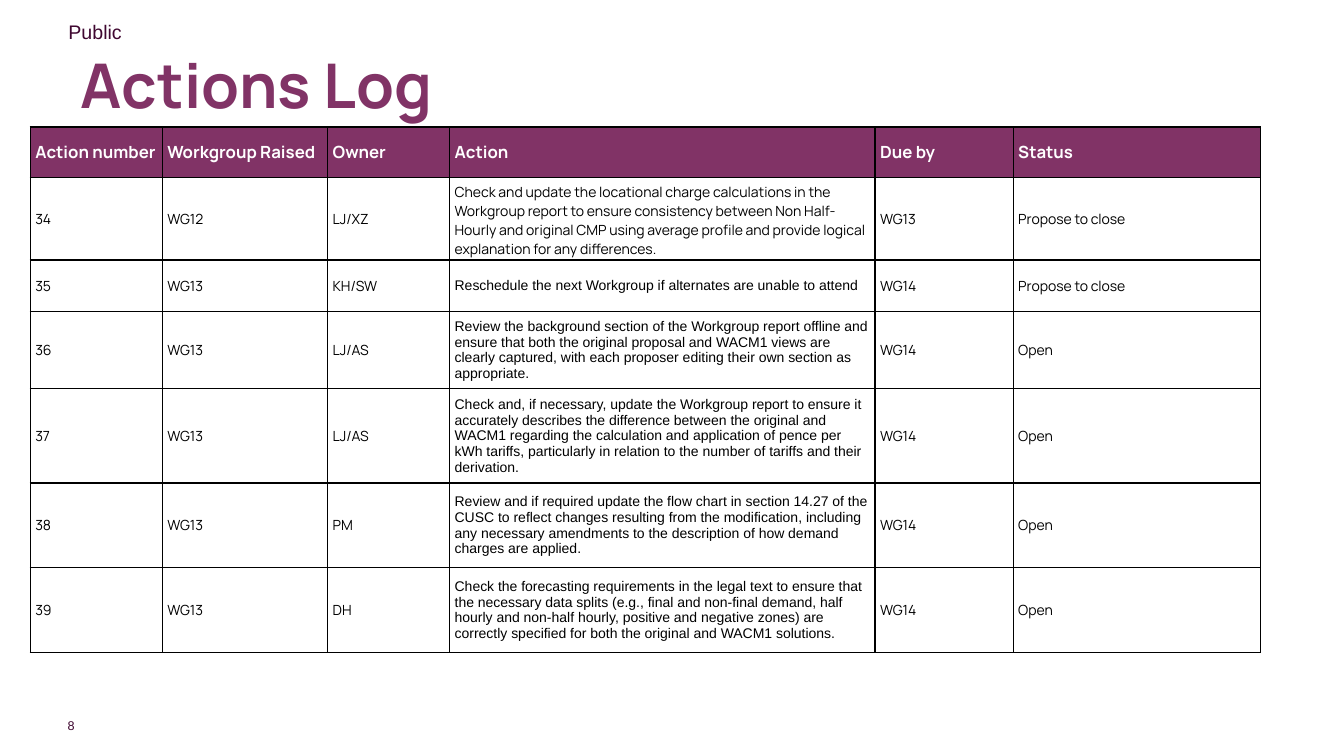
"""Build the Actions Log slide with its table of workgroup actions."""
from lxml import etree
from pptx import Presentation
from pptx import util as u
from pptx.dml.color import RGBColor
from pptx.enum import text
from pptx.oxml.ns import qn

PX = 9144
PLUM = RGBColor(0x81, 0x33, 0x66)
DARK = RGBColor(0x3F, 0x07, 0x30)
WHITE = RGBColor(0xFF, 0xFF, 0xFF)
BLACK = RGBColor(0, 0, 0)
LEFT, RIGHT = text.PP_ALIGN.LEFT, text.PP_ALIGN.RIGHT
MIDDLE = text.MSO_ANCHOR.MIDDLE

HEADS = ["Action number", "Workgroup Raised", "Owner", "Action", "Due by", "Status"]
ROWS = [
    ["34", "WG12", "LJ/XZ",
     "Check and update the locational charge calculations in the Workgroup report "
     "to ensure consistency between Non Half-Hourly and original CMP using average "
     "profile and provide logical explanation for any differences.",
     "WG13", "Propose to close"],
    ["35", "WG13", "KH/SW",
     "Reschedule the next Workgroup if alternates are unable to attend",
     "WG14", "Propose to close"],
    ["36", "WG13", "LJ/AS",
     "Review the background section of the Workgroup report offline and ensure that "
     "both the original proposal and WACM1 views are clearly captured, with each "
     "proposer editing their own section as appropriate.",
     "WG14", "Open"],
    ["37", "WG13", "LJ/AS",
     "Check and, if necessary, update the Workgroup report to ensure it accurately "
     "describes the difference between the original and WACM1 regarding the "
     "calculation and application of pence per kWh tariffs, particularly in relation "
     "to the number of tariffs and their derivation.",
     "WG14", "Open"],
    ["38", "WG13", "PM",
     "Review and if required update the flow chart in section 14.27 of the CUSC to "
     "reflect changes resulting from the modification, including any necessary "
     "amendments to the description of how demand charges are applied.",
     "WG14", "Open"],
    ["39", "WG13", "DH",
     "Check the forecasting requirements in the legal text to ensure that the "
     "necessary data splits (e.g., final and non-final demand, half hourly and "
     "non-half hourly, positive and negative zones) are correctly specified for both "
     "the original and WACM1 solutions.",
     "WG14", "Open"],
]
WIDTHS = [131, 164, 121, 422, 137, 245]
HEIGHTS = [50, 82, 51, 68, 68, 84, 84]


def write(frame, words, size, face, color, bold=False, align=LEFT):
    frame.text = words
    para = frame.paragraphs[0]
    para.alignment = align
    font = para.runs[0].font
    font.size, font.name, font.bold = u.Pt(size), face, bold
    font.color.rgb = color
    return para


def border(cell):
    props = cell._tc.get_or_add_tcPr()
    for side in ("lnL", "lnR", "lnT", "lnB"):
        line = etree.SubElement(props, qn(f"a:{side}"), w=str(u.Pt(1)))
        fill = etree.SubElement(line, qn("a:solidFill"))
        etree.SubElement(fill, qn("a:srgbClr"), val=str(BLACK))


deck = Presentation()
deck.slide_width, deck.slide_height = 1333 * PX, 750 * PX
slide = deck.slides.add_slide(deck.slide_layouts[5])

page = slide.shapes.add_textbox(59 * PX, 712 * PX, 15 * PX, 15 * PX).text_frame
page.margin_left = page.margin_right = page.margin_top = page.margin_bottom = 0
page.word_wrap = True
page.vertical_anchor = MIDDLE
write(page, "8", 9, "Arial", DARK, align=RIGHT)

label = slide.shapes.add_textbox(58 * PX, 15 * PX, 500 * PX, 34 * PX).text_frame
label.word_wrap = True
write(label, "Public", 14, "Arial", DARK)

title = slide.shapes.title
title.left, title.top, title.width, title.height = 70 * PX, 40 * PX, 1062 * PX, 95 * PX
title.text_frame.auto_size = text.MSO_AUTO_SIZE.NONE
title.text_frame.vertical_anchor = MIDDLE
para = write(title.text_frame, "Actions Log", 44, "Manrope", PLUM, True)
para.line_spacing = 0.9

table = slide.shapes.add_table(len(HEIGHTS), len(WIDTHS), 30 * PX, 126 * PX,
                               sum(WIDTHS) * PX, sum(HEIGHTS) * PX).table
table.horz_banding = False
for col, width in zip(table.columns, WIDTHS):
    col.width = width * PX
for row, height in zip(table.rows, HEIGHTS):
    row.height = height * PX

for r, words in enumerate([HEADS] + ROWS):
    for c, word in enumerate(words):
        cell = table.cell(r, c)
        cell.margin_left = cell.margin_right = 5 * PX
        cell.margin_top = cell.margin_bottom = 5 * PX
        cell.vertical_anchor = MIDDLE
        border(cell)
        if r == 0:
            cell.fill.solid()
            cell.fill.fore_color.rgb = PLUM
            write(cell.text_frame, word, 12, "Manrope", WHITE, True)
        else:
            cell.fill.background()
            face = "Arial" if c == 3 and r > 1 else "Manrope"
            write(cell.text_frame, word, 10, face, BLACK)

deck.save("out.pptx")
